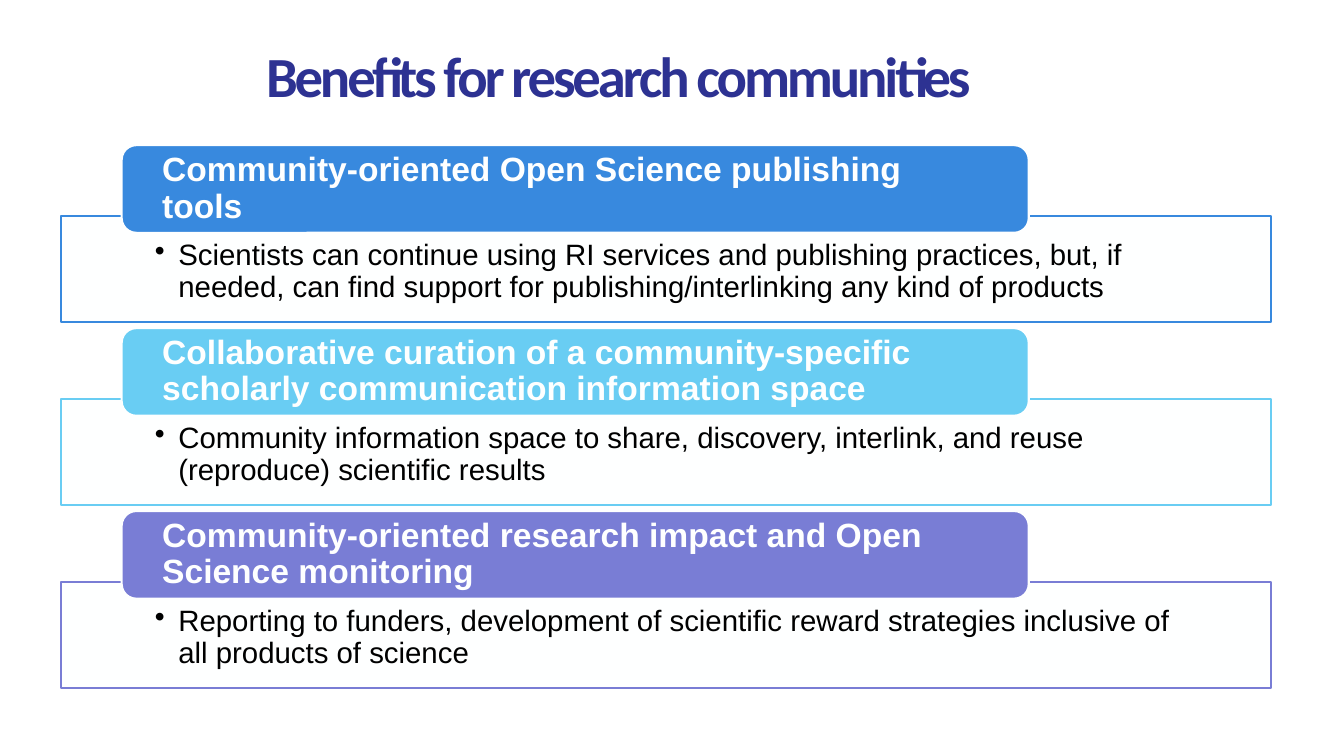
from lxml import etree
from pptx import Presentation
from pptx.dml.color import RGBColor
from pptx.enum.shapes import MSO_SHAPE as Shape
from pptx.enum.text import MSO_ANCHOR as Anchor, MSO_AUTO_SIZE as AutoSize, PP_ALIGN as Align
from pptx.oxml.ns import qn
from pptx.util import Inches, Pt

NAVY = RGBColor(0x2D, 0x32, 0x92)
BLUE = RGBColor(0x38, 0x89, 0xDE)
SKY = RGBColor(0x69, 0xCD, 0xF3)
VIOLET = RGBColor(0x79, 0x7D, 0xD5)
WHITE = RGBColor(0xFE, 0xFF, 0xFF)
BLACK = RGBColor(0, 0, 0)

TITLE_FONT = {"name": "Calibri", "size": Pt(54), "bold": True}
HEADING_FONT = {"name": "Arial", "size": Pt(32), "bold": True}
DETAIL_FONT = {"name": "Arial", "size": Pt(28), "bold": False}

BENEFITS = [
    (BLUE, "Community-oriented Open Science publishing tools",
     "Scientists can continue using RI services and publishing practices, but, if needed, "
     "can find support for publishing/interlinking any kind of products"),
    (SKY, "Collaborative curation of a community-specific scholarly communication information space",
     "Community information space to share, discovery, interlink, and reuse (reproduce) "
     "scientific results"),
    (VIOLET, "Community-oriented research impact and Open Science monitoring",
     "Reporting to funders, development of scientific reward strategies inclusive of all "
     "products of science"),
]
BENEFIT_PITCH = 2.42


def set_attributes(target, values):
    for name, value in values.items():
        setattr(target, name, value)


def format_frame(frame, margins, anchor):
    """Wrap the text and set left, top, right and bottom margins in inches."""
    sides = ("margin_left", "margin_top", "margin_right", "margin_bottom")
    set_attributes(frame, dict(zip(sides, map(Inches, margins))))
    set_attributes(frame, {"word_wrap": True, "auto_size": AutoSize.NONE,
                           "vertical_anchor": anchor})


def write_text(paragraph, text, font, color, align=Align.LEFT):
    run = paragraph.add_run()
    run.text = text
    paragraph.alignment = align
    set_attributes(run.font, font)
    run.font.color.rgb = color
    return run


def add_bullet(paragraph, indent):
    properties = paragraph._p.get_or_add_pPr()
    properties.set("marL", str(indent))
    properties.set("indent", str(-indent))
    etree.SubElement(properties, qn("a:buChar")).set("char", "•")


def add_panel(slide, kind, box, fill, line):
    panel = slide.shapes.add_shape(kind, *map(Inches, box))
    panel.shadow.inherit = False
    panel.fill.solid()
    panel.fill.fore_color.rgb = fill
    panel.line.color.rgb = line
    panel.line.width = Pt(2)
    return panel


def set_opacity(panel, percent):
    color = panel._element.spPr.find(qn("a:solidFill"))[0]
    etree.SubElement(color, qn("a:alpha")).set("val", str(percent * 1000))


def place_title(slide, box, text):
    title = slide.shapes.title
    set_attributes(title, dict(zip(("left", "top", "width", "height"), map(Inches, box))))
    format_frame(title.text_frame, (0, 0, 0, 0), Anchor.MIDDLE)
    run = write_text(title.text_frame.paragraphs[0], text, TITLE_FONT, NAVY, Align.CENTER)
    run.font._element.set("spc", "-300")


def add_benefit(slide, box, color, heading, detail):
    """Draw an outlined detail panel with a heading tab over its top edge."""
    left, top, width, height = box
    panel = add_panel(slide, Shape.RECTANGLE, (left, top + 0.94, width, height - 0.94),
                      WHITE, color)
    set_opacity(panel, 90)
    format_frame(panel.text_frame, (1.24, 0.32, 1.24, 0.22), Anchor.TOP)
    paragraph = panel.text_frame.paragraphs[0]
    paragraph.line_spacing = 0.9
    add_bullet(paragraph, Inches(0.31))
    write_text(paragraph, detail, DETAIL_FONT, BLACK)

    tab = add_panel(slide, Shape.ROUNDED_RECTANGLE, (left + 0.8, top, width * 0.75, 1.16),
                    color, WHITE)
    format_frame(tab.text_frame, (0.48, 0.05, 0.48, 0.05), Anchor.MIDDLE)
    paragraph = tab.text_frame.paragraphs[0]
    paragraph.line_spacing = 0.9
    write_text(paragraph, heading, HEADING_FONT, WHITE)


def main():
    presentation = Presentation()
    presentation.slide_width = Inches(17.78)
    presentation.slide_height = Inches(10)
    slide = presentation.slides.add_slide(presentation.slide_layouts.get_by_name("Title Only"))
    place_title(slide, (0.78, 0.37, 14.8, 1.25), "Benefits for research communities")
    for row, benefit in enumerate(BENEFITS):
        add_benefit(slide, (0.81, 1.92 + row * BENEFIT_PITCH, 16, 2.34), *benefit)
    presentation.save("out.pptx")


if __name__ == "__main__":
    main()
